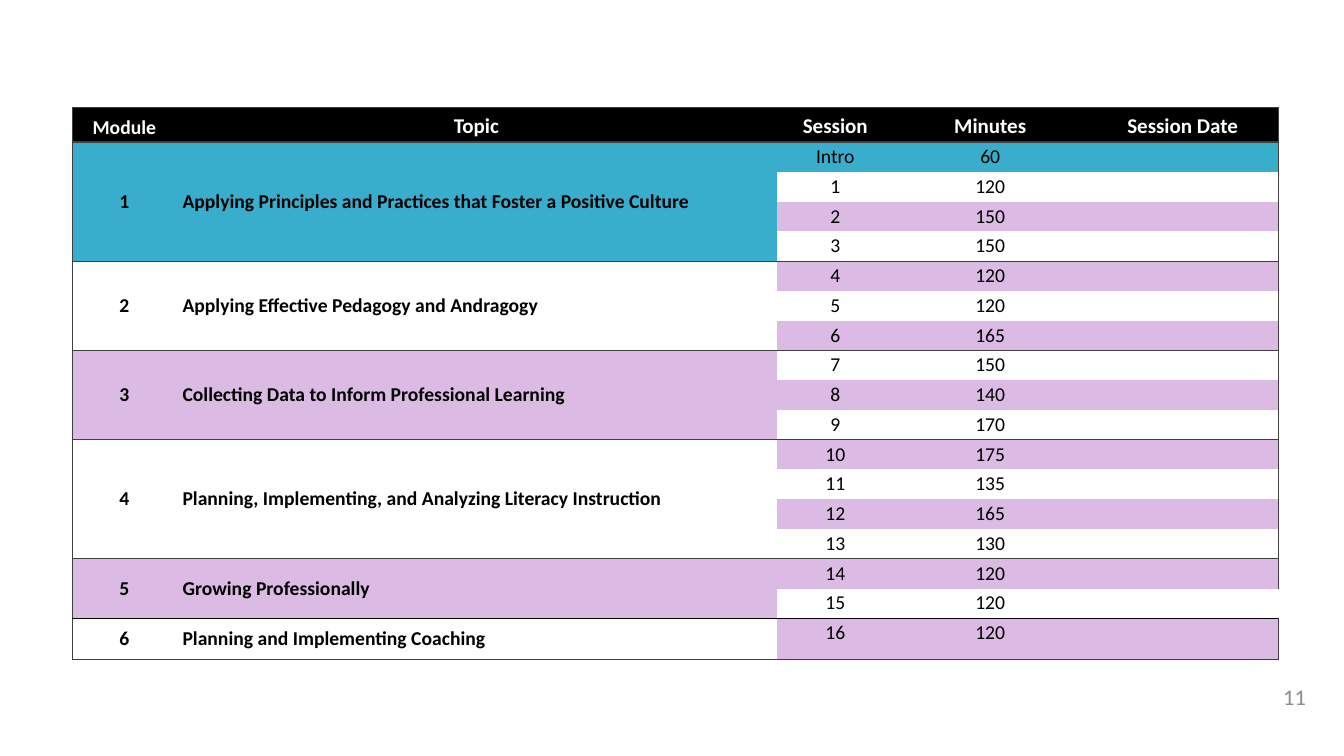
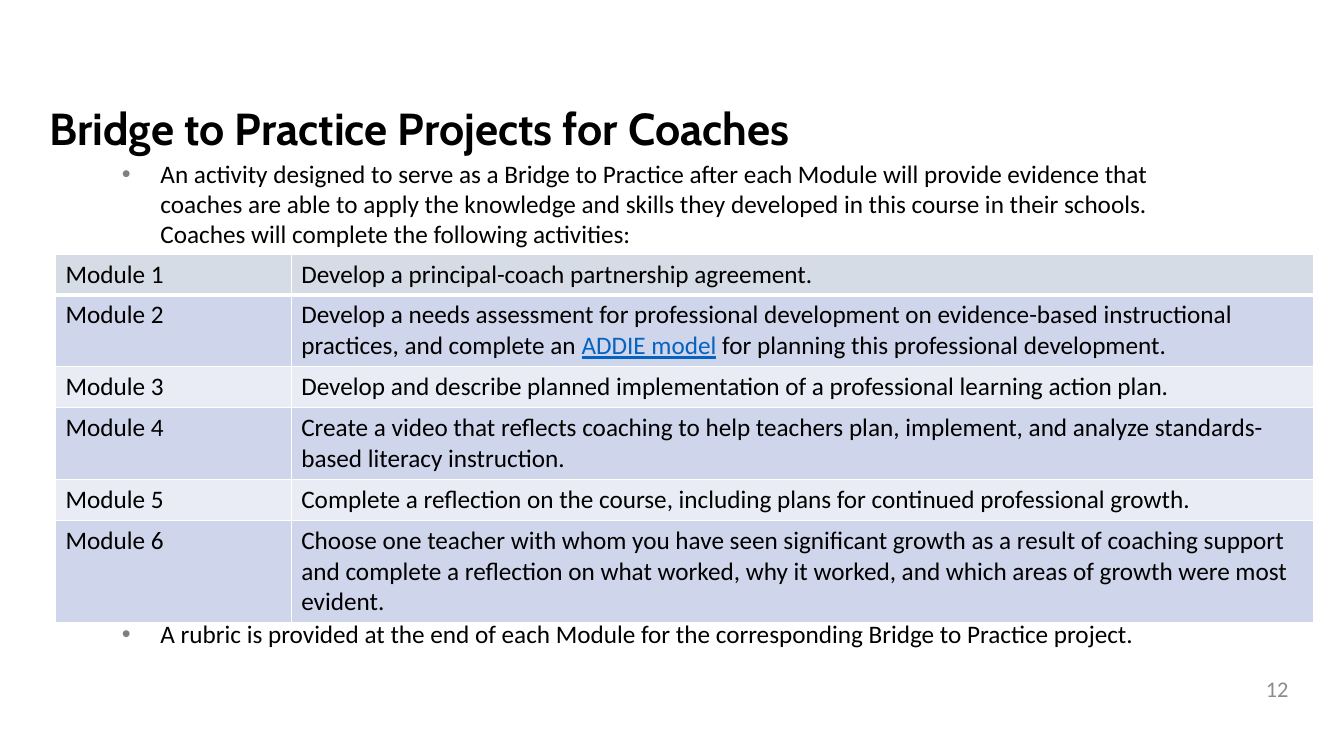
"""Build two course slides: the session schedule and the coach projects."""
from dataclasses import dataclass

from lxml.etree import SubElement
from pptx import Presentation
from pptx.dml.color import RGBColor as Rgb
from pptx.enum.text import MSO_ANCHOR as Anchor, MSO_AUTO_SIZE as AutoSize, PP_ALIGN as Align
from pptx.oxml.ns import qn
from pptx.util import Cm, Pt


@dataclass(frozen=True)
class Theme:
    """Colours, fonts and type sizes shared by the slides."""
    ink: str = "000000"
    paper: str = "FFFFFF"
    rule: str = "3F3F3F"
    teal: str = "38AECC"
    lavender: str = "DBBBE3"
    mist: str = "D6DCE5"
    band_dark: str = "CFD5EA"
    band_light: str = "E9EBF5"
    link: str = "0563C1"
    bullet: str = "7F7F7F"
    number: str = "8C8C8C"
    title_font: str = "Cabin"
    text_font: str = "Calibri"
    title_size: int = 32
    text_size: int = 18
    number_size: int = 16
    heading_size: int = 15
    schedule_size: int = 14


THEME = Theme()

HEADINGS = ["Module", "Topic", "Session", "Minutes", "Session Date"]
MODULES = [
    ("Applying Principles and Practices that Foster a Positive Culture", [60, 120, 150, 150]),
    ("Applying Effective Pedagogy and Andragogy", [120, 120, 165]),
    ("Collecting Data to Inform Professional Learning", [150, 140, 170]),
    ("Planning, Implementing, and Analyzing Literacy Instruction", [175, 135, 165, 130]),
    ("Growing Professionally", [120, 120]),
    ("Planning and Implementing Coaching", [120]),
]
PROJECTS = [
    (1, ["Develop a principal-coach partnership agreement."]),
    (2, ["Develop a needs assessment for professional development on evidence-based "
         "instructional practices, and complete an ", "ADDIE model",
         " for planning this professional development."]),
    (1, ["Develop and describe planned implementation of a professional learning action plan."]),
    (2, ["Create a video that reflects coaching to help teachers plan, implement, and analyze "
         "standards-based literacy instruction."]),
    (1, ["Complete a reflection on the course, including plans for continued professional "
         "growth."]),
    (3, ["Choose one teacher with whom you have seen significant growth as a result of coaching "
         "support and complete a reflection on what worked, why it worked, and which areas of "
         "growth were most evident."]),
]
POINTS = [
    "An activity designed to serve as a Bridge to Practice after each Module will provide "
    "evidence that coaches are able to apply the knowledge and skills they developed in this "
    "course in their schools. Coaches will complete the following activities:",
    "A rubric is provided at the end of each Module for the corresponding Bridge to Practice "
    "project.",
]


def style(para, size, color=THEME.ink, bold=False, align=Align.LEFT, font=THEME.text_font):
    """Set the alignment and font of a paragraph."""
    para.alignment = align
    para.font.name = font
    para.font.size = Pt(size)
    para.font.bold = bold
    para.font.color.rgb = Rgb.from_string(color)


def place(shape, left, top, width, height):
    """Move and size a shape, in centimetres."""
    shape.left, shape.top = Cm(left), Cm(top)
    shape.width, shape.height = Cm(width), Cm(height)


def add_page_number(page, number, left, top):
    """Add the page number at the lower right."""
    box = page.shapes.add_textbox(Cm(left), Cm(top), Cm(5.92), Cm(0.76))
    box.text_frame.word_wrap = True
    box.text_frame.vertical_anchor = Anchor.MIDDLE
    para = box.text_frame.paragraphs[0]
    para.text = str(number)
    style(para, THEME.number_size, THEME.number, align=Align.RIGHT)


def add_grid(page, left, top, widths, heights):
    """Add an unbanded table with the given column and row sizes."""
    table = page.shapes.add_table(len(heights), len(widths), Cm(left), Cm(top),
                                  Cm(sum(widths)), Cm(sum(heights))).table
    table.first_row = table.horz_banding = False
    for column, width in zip(table.columns, widths):
        column.width = Cm(width)
    for row, height in zip(table.rows, heights):
        row.height = Cm(height)
    return table


def paint_cell(cell, fill, **edges):
    """Fill a cell and draw its edges, each a colour and a width."""
    props = cell._tc.get_or_add_tcPr()
    for side in "LRTB":
        color, width = edges.get(side) or (None, 1)
        line = SubElement(props, qn(f"a:ln{side}"), w=str(Pt(width)))
        if color:
            solid = SubElement(line, qn("a:solidFill"))
            SubElement(solid, qn("a:srgbClr"), val=color)
        else:
            SubElement(line, qn("a:noFill"))
    cell.fill.solid()
    cell.fill.fore_color.rgb = Rgb.from_string(fill)


def write_schedule_cell(cell, text, anchor=Anchor.TOP, size=THEME.schedule_size, **look):
    """Write one compact schedule cell."""
    cell.margin_left = cell.margin_right = Cm(0.16)
    cell.margin_top = cell.margin_bottom = Cm(0.07)
    cell.vertical_anchor = anchor
    para = cell.text_frame.paragraphs[0]
    para.text = text
    style(para, size, **look)
    if not text:
        SubElement(para._p, qn("a:endParaRPr"), sz=str(size * 100))


def add_module(table, number, topic, minutes, start):
    """Write one module's rows, beginning at its first session."""
    first, last = start + 1, start + len(minutes)
    opening = (THEME.ink if number == len(MODULES) else THEME.rule, 1)
    closing = (THEME.ink if number == len(MODULES) - 1 else THEME.rule, 1)
    side = (THEME.rule, 1)
    tints = [THEME.paper, THEME.lavender]
    module_fill = THEME.teal if number == 1 else tints[number % 2]
    for row, length in enumerate(minutes, first):
        session = row - 1
        session_fill = tints[(session + 1) % 2] if session else THEME.teal
        texts = ["", "", str(session or "Intro"), str(length), ""]
        if row == first:
            texts[:2] = [str(number), topic]
        for column, text in enumerate(texts):
            merged = column < 2
            cell = table.cell(row, column)
            paint_cell(cell, module_fill if merged else session_fill,
                       L=side if column == 0 else None,
                       R=side if column == 4 and session != 15 else None,
                       T=opening if row == first else None,
                       B=closing if row == last or (merged and row == first) else None)
            write_schedule_cell(cell, text, Anchor.MIDDLE if merged else Anchor.TOP, bold=merged,
                                align=Align.LEFT if column == 1 else Align.CENTER)
    if last > first:
        for column in range(2):
            table.cell(first, column).merge(table.cell(last, column))


def build_schedule(deck):
    """Build the schedule of modules and sessions."""
    page = deck.slides.add_slide(deck.slide_layouts[6])
    sessions = sum(len(minutes) for _, minutes in MODULES)
    heights = [0.88] + [0.75] * (sessions - 1) + [1.04]
    table = add_grid(page, 1.83, 2.7, [2.61, 15.13, 2.96, 4.85, 4.85], heights)
    side = (THEME.rule, 1)
    for column, heading in enumerate(HEADINGS):
        cell = table.cell(0, column)
        paint_cell(cell, THEME.ink, T=side, B=side, L=side if column == 0 else None,
                   R=side if column == 4 else None)
        write_schedule_cell(cell, heading, Anchor.BOTTOM,
                            THEME.heading_size if column else THEME.schedule_size,
                            color=THEME.paper, bold=True, align=Align.CENTER)
    start = 0
    for number, (topic, minutes) in enumerate(MODULES, 1):
        add_module(table, number, topic, minutes, start)
        start += len(minutes)
    add_page_number(page, 11, 27.24, 17.16)


def write_points(body):
    """Write the bulleted points above and below the project table."""
    frame = body.text_frame
    frame.auto_size = AutoSize.NONE
    for index, point in enumerate(POINTS):
        para = frame.add_paragraph() if index else frame.paragraphs[0]
        para.text = point
        props = para._p.get_or_add_pPr()
        props.set("marL", str(Cm(0.97)))
        props.set("indent", str(-Cm(0.97)))
        color = SubElement(props, qn("a:buClr"))
        SubElement(color, qn("a:srgbClr"), val=THEME.bullet)
        para.space_before = Pt(264 * index)
        style(para, THEME.text_size)


def write_project_cell(cell, pieces):
    """Write one project cell, underlining its second piece as a link."""
    para = cell.text_frame.paragraphs[0]
    for index, piece in enumerate(pieces):
        span = para.add_run()
        span.text = piece
        if index == 1:
            span.font.underline = True
            span.font.color.rgb = Rgb.from_string(THEME.link)
    style(para, THEME.text_size)


def build_projects(deck):
    """Build the list of projects for coaches."""
    page = deck.slides.add_slide(deck.slide_layouts[1])
    title, body = page.placeholders
    place(title, 0.99, 2.01, 23.04, 2.39)
    title.text_frame.text = "Bridge to Practice Projects for Coaches"
    title.text_frame.vertical_anchor = Anchor.MIDDLE
    style(title.text_frame.paragraphs[0], THEME.title_size, bold=True, font=THEME.title_font)
    place(body, 2.82, 3.86, 27.05, 12.9)
    write_points(body)
    heights = [0.25 + 0.78 * lines for lines, _ in PROJECTS]
    table = add_grid(page, 1.4, 6.4, [5.94, 25.76], heights)
    thin, thick = (THEME.paper, 1), (THEME.paper, 3)
    for row, (_, pieces) in enumerate(PROJECTS):
        fill = [THEME.band_light, THEME.band_dark][row % 2] if row else THEME.mist
        for column, content in enumerate([[f"Module {row + 1}"], pieces]):
            cell = table.cell(row, column)
            paint_cell(cell, fill, L=thin, R=thin, T=thick if row == 1 else thin,
                       B=thin if row else thick)
            write_project_cell(cell, content)
    add_page_number(page, 12, 26.8, 16.96)


def main():
    """Build and save the deck."""
    deck = Presentation()
    deck.slide_width, deck.slide_height = Cm(33.87), Cm(19.05)
    build_schedule(deck)
    build_projects(deck)
    deck.save("out.pptx")


if __name__ == "__main__":
    main()
